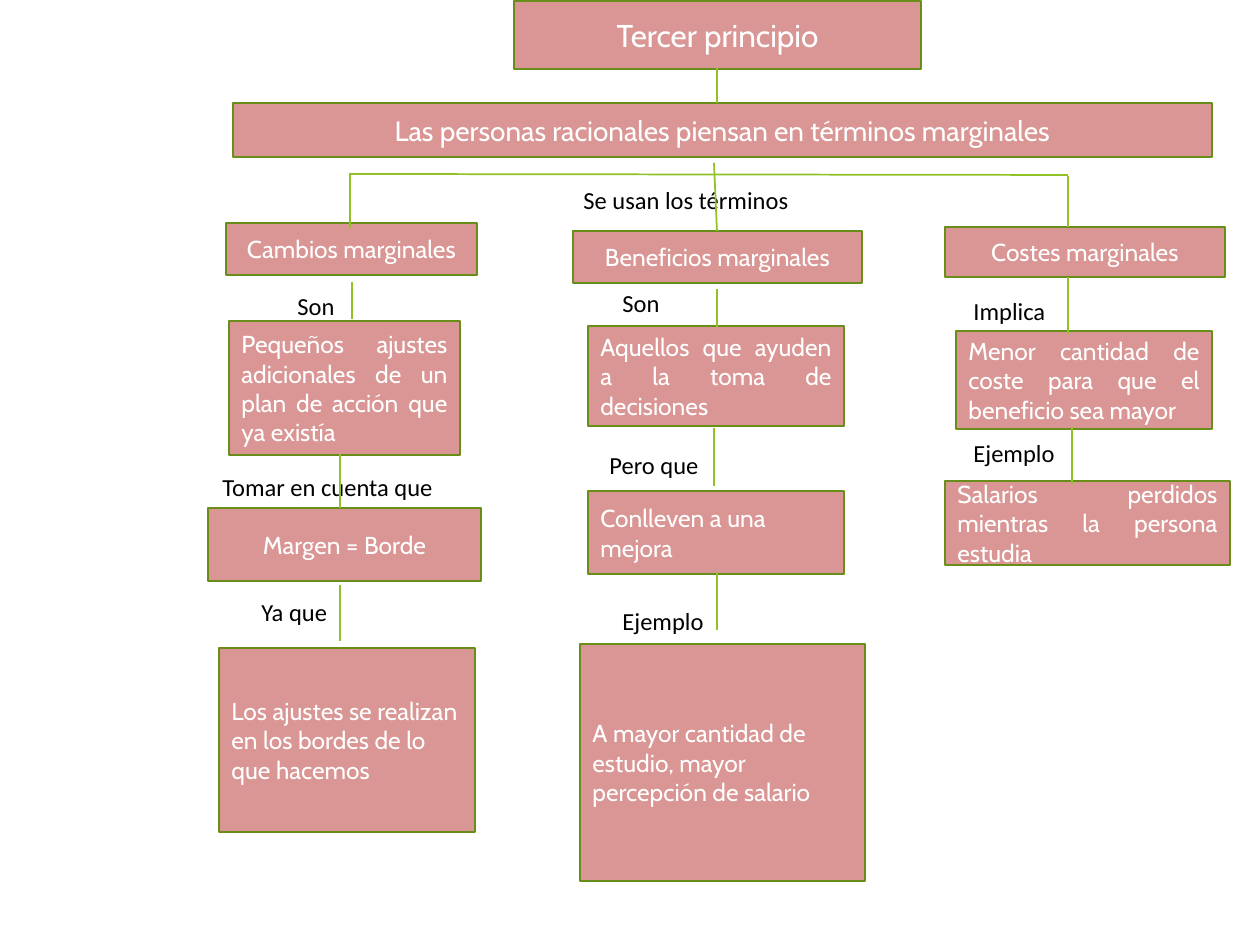
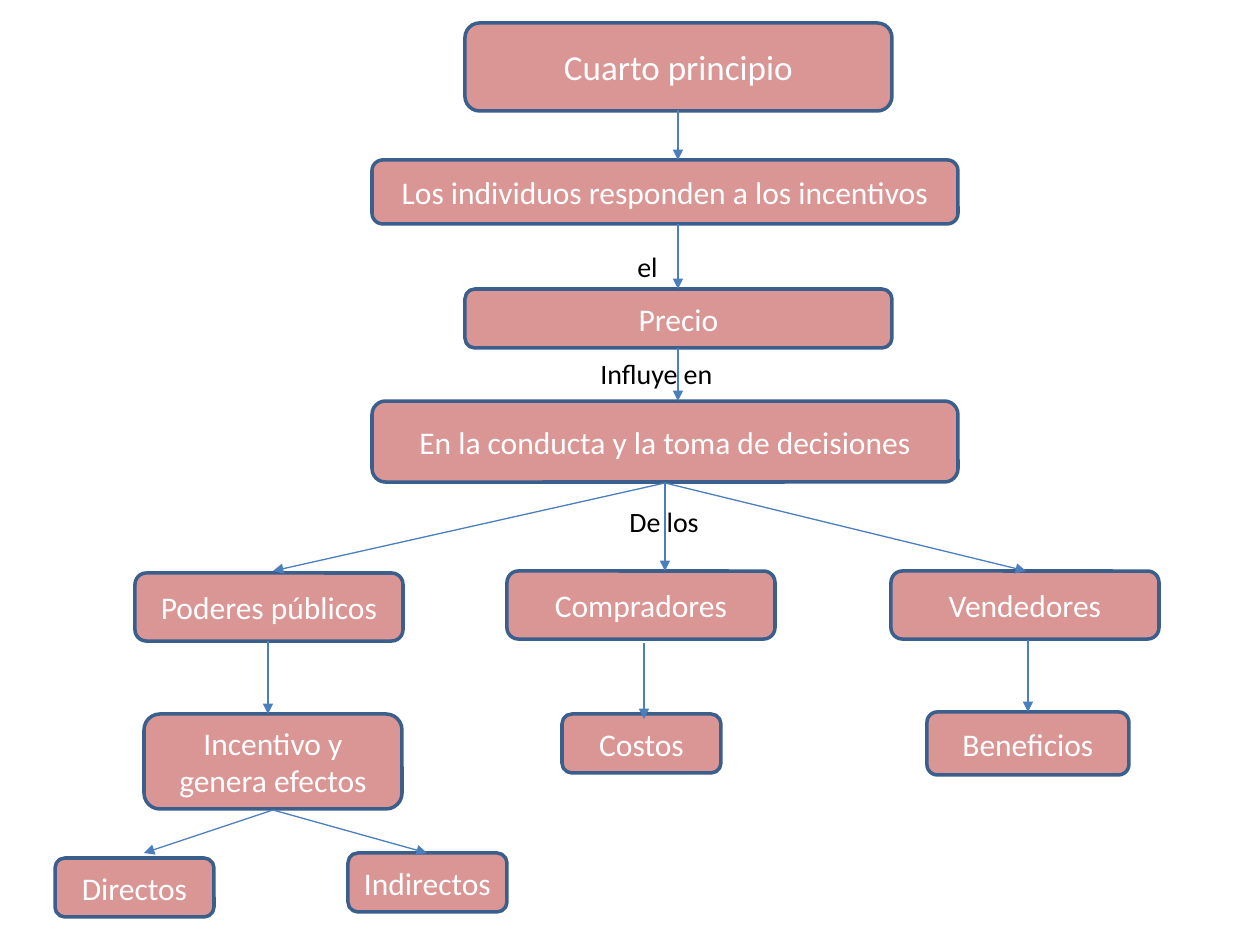
"""Build two concept maps on the third and fourth principles of economics."""
from dataclasses import dataclass

from lxml import etree
from pptx import Presentation
from pptx import util as u
from pptx.dml.color import RGBColor
from pptx.enum import shapes, text
from pptx.oxml.ns import qn

PX_PER_INCH = 126
C, J, L = text.PP_ALIGN.CENTER, text.PP_ALIGN.JUSTIFY, text.PP_ALIGN.LEFT


@dataclass(frozen=True)
class Theme:
    """Colours, fonts and sizes of one concept map."""
    outline: str
    link: str
    box_font: str
    outline_pt: float
    link_pt: float
    label_pt: int
    preset: int
    arrow: bool
    fill: str = "D99694"
    box_ink: str = "FFFFFF"
    label_ink: str = "000000"
    label_font: str = "Calibri"


GREEN = Theme("688E19", "90C226", "Cabin", 1.5, 1, 14,
              shapes.MSO_SHAPE.RECTANGLE, False)
BLUE = Theme("3A5F8C", "4B7EBC", "Calibri", 2, 0.75, 16,
             shapes.MSO_SHAPE.ROUNDED_RECTANGLE, True)

THIRD = {
    "theme": GREEN,
    "boxes": [
        ("Tercer principio", (514, 1, 407, 68), 18, C),
        ("Las personas racionales piensan en términos marginales",
         (233, 103, 979, 54), 16, C),
        ("Cambios marginales", (226, 223, 251, 52), 14, C),
        ("Pequeños ajustes adicionales de un plan de acción que ya existía",
         (229, 321, 231, 134), 14, J),
        ("Margen = Borde", (208, 508, 273, 73), 14, C),
        ("Los ajustes se realizan en los bordes de lo que hacemos",
         (219, 648, 256, 184), 14, L),
        ("Beneficios marginales", (573, 231, 289, 52), 14, C),
        ("Aquellos que ayuden a la toma de decisiones",
         (588, 326, 256, 100), 14, J),
        ("Conlleven a una mejora", (588, 491, 256, 83), 14, L),
        ("A mayor cantidad de estudio, mayor percepción de salario",
         (580, 644, 285, 237), 14, L),
        ("Costes marginales", (945, 227, 280, 50), 14, C),
        ("Menor cantidad de coste para que el beneficio sea mayor",
         (956, 331, 256, 98), 14, J),
        ("Salarios perdidos mientras la persona estudia",
         (945, 481, 285, 84), 14, J),
    ],
    "labels": [
        ("Se usan los términos", (571, 179, 312, 43)),
        ("Son", (285, 285, 77, 43)),
        ("Tomar en cuenta que", (210, 466, 267, 43)),
        ("Ya que", (249, 591, 171, 43)),
        ("Son", (610, 282, 77, 43)),
        ("Pero que", (597, 444, 171, 43)),
        ("Ejemplo", (610, 600, 171, 43)),
        ("Implica", (961, 290, 150, 43)),
        ("Ejemplo", (961, 432, 171, 43)),
    ],
    "links": [
        (717, 68, 717, 103), (717, 231, 714, 163), (350, 174, 1068, 175),
        (350, 173, 350, 228), (352, 282, 352, 319), (340, 454, 340, 508),
        (340, 585, 340, 641), (717, 289, 717, 327), (714, 428, 714, 486),
        (717, 572, 717, 630), (1068, 176, 1068, 227), (1068, 277, 1068, 334),
        (1072, 427, 1072, 484),
    ],
}

FOURTH = {
    "theme": BLUE,
    "boxes": [
        ("Cuarto principio", (465, 23, 427, 88), 20, C),
        ("Los individuos responden a los incentivos",
         (372, 160, 586, 64), 18, C),
        ("Precio", (465, 289, 427, 59), 18, C),
        ("En la conducta y la toma de decisiones",
         (372, 401, 586, 81), 18, C),
        ("Poderes públicos", (135, 573, 268, 68), 18, C),
        ("Compradores", (507, 571, 268, 68), 18, C),
        ("Vendedores", (891, 571, 268, 68), 18, C),
        ("Incentivo y genera efectos", (144, 714, 258, 95), 18, C),
        ("Costos", (562, 714, 159, 59), 18, C),
        ("Beneficios", (927, 712, 202, 63), 18, C),
        ("Directos", (55, 858, 159, 59), 18, C),
        ("Indirectos", (348, 853, 159, 59), 18, C),
    ],
    "labels": [
        ("el", (625, 243, 152, 47)),
        ("Influye en", (588, 350, 152, 47)),
        ("De los", (617, 498, 152, 47)),
    ],
    "links": [
        (678, 110, 678, 160), (678, 224, 678, 289), (678, 348, 678, 401),
        (665, 483, 273, 571), (665, 483, 665, 571), (665, 483, 1026, 571),
        (268, 641, 268, 714), (644, 643, 644, 719), (1028, 640, 1028, 712),
        (273, 810, 144, 853), (273, 810, 427, 853),
    ],
}


def emu(lengths):
    return [u.Emu(round(n * 914400 / PX_PER_INCH)) for n in lengths]


def write(frame, words, align, font, size, ink):
    frame.word_wrap = True
    frame.text = words
    paragraph = frame.paragraphs[0]
    paragraph.alignment = align
    for run in paragraph.runs:
        run.font.name = font
        run.font.size = u.Pt(size)
        run.font.color.rgb = RGBColor.from_string(ink)


def add_box(slide, theme, words, place, size, align):
    box = slide.shapes.add_shape(theme.preset, *emu(place))
    box.shadow.inherit = False
    box.fill.solid()
    box.fill.fore_color.rgb = RGBColor.from_string(theme.fill)
    box.line.color.rgb = RGBColor.from_string(theme.outline)
    box.line.width = u.Pt(theme.outline_pt)
    box.text_frame.vertical_anchor = text.MSO_ANCHOR.MIDDLE
    write(box.text_frame, words, align, theme.box_font, size, theme.box_ink)


def add_link(slide, theme, ends):
    link = slide.shapes.add_connector(shapes.MSO_CONNECTOR.STRAIGHT, *emu(ends))
    link.line.color.rgb = RGBColor.from_string(theme.link)
    link.line.width = u.Pt(theme.link_pt)
    properties = link._element.spPr
    if theme.arrow:
        stroke = properties.find(qn("a:ln"))
        etree.SubElement(stroke, qn("a:tailEnd")).set("type", "triangle")
    etree.SubElement(properties, qn("a:effectLst"))


def add_label(slide, theme, words, place):
    label = slide.shapes.add_textbox(*emu(place))
    write(label.text_frame, words, L, theme.label_font, theme.label_pt,
          theme.label_ink)
    label.text_frame.auto_size = text.MSO_AUTO_SIZE.SHAPE_TO_FIT_TEXT


def add_map(deck, concept):
    slide = deck.slides.add_slide(deck.slide_layouts[6])
    theme = concept["theme"]
    for words, place, size, align in concept["boxes"]:
        add_box(slide, theme, words, place, size, align)
    for words, place in concept["labels"]:
        add_label(slide, theme, words, place)
    for ends in concept["links"]:
        add_link(slide, theme, ends)


def main():
    deck = Presentation()
    deck.slide_width, deck.slide_height = emu((1260, 945))
    for concept in (THIRD, FOURTH):
        add_map(deck, concept)
    deck.save("out.pptx")


if __name__ == "__main__":
    main()
